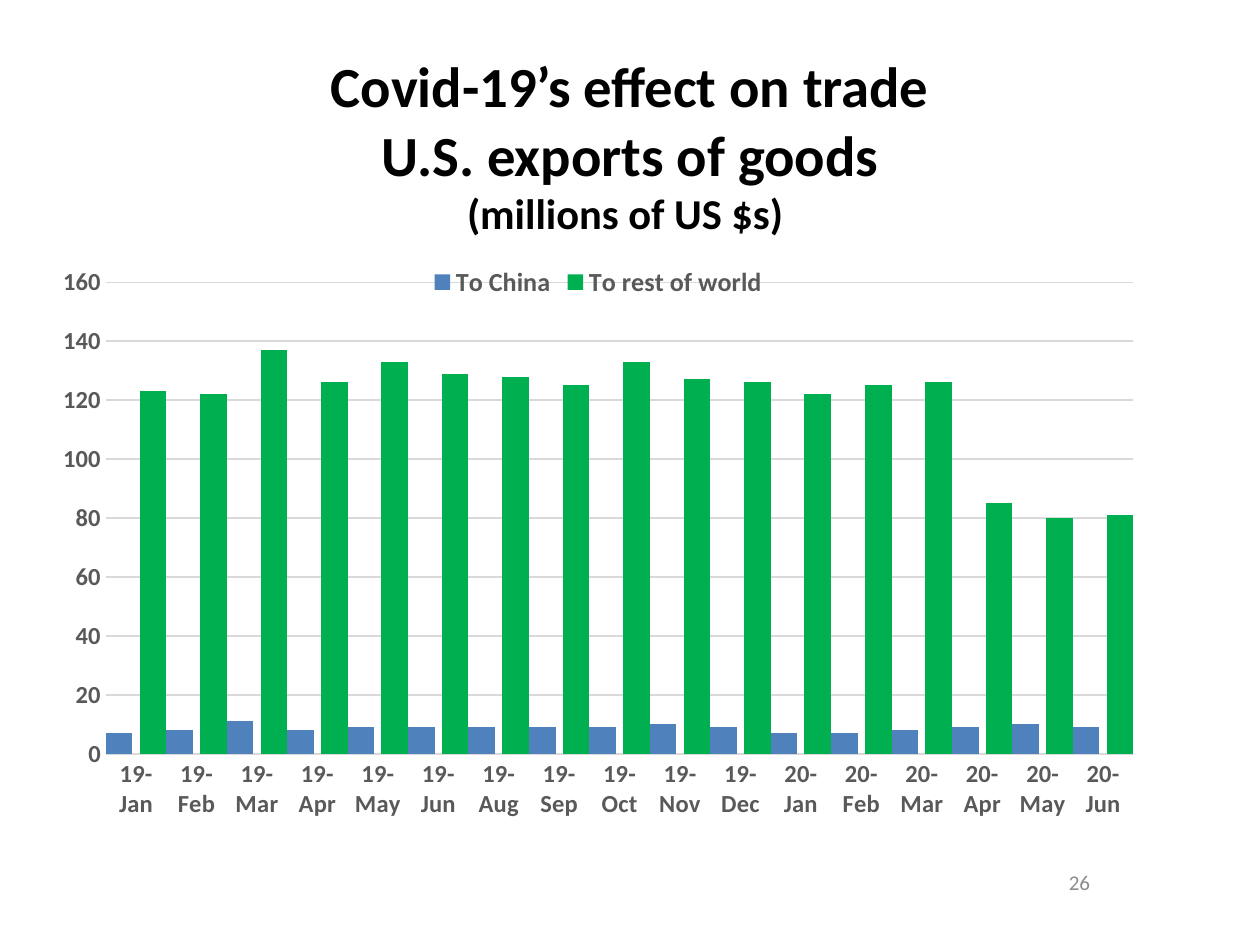
from lxml.etree import SubElement
from pptx import Presentation
from pptx.chart.data import CategoryChartData
from pptx.dml.color import RGBColor
from pptx.enum.chart import XL_CHART_TYPE as ChartType, XL_LEGEND_POSITION as LegendPos, XL_TICK_MARK as Tick
from pptx.enum.text import MSO_ANCHOR as Anchor, PP_ALIGN as Align
from pptx.oxml.ns import qn
from pptx.util import Pt

FONT = "Calibri"
GREY, GRID = "595959", "D9D9D9"
MONTHS = (
    [f"19-{month}" for month in "Jan Feb Mar Apr May Jun Aug Sep Oct Nov Dec".split()]
    + [f"20-{month}" for month in "Jan Feb Mar Apr May Jun".split()]
)
EXPORTS = {
    "To China": ("4F81BD", [7, 8, 11, 8, 9, 9, 9, 9, 9, 10, 9, 7, 7, 8, 9, 10, 9]),
    "To rest of world": ("00B050", [123, 122, 137, 126, 133, 129, 128, 125, 133,
                                    127, 126, 122, 125, 126, 85, 80, 81]),
}


def color(hex_code):
    """Turn a hex string into a colour."""
    return RGBColor.from_string(hex_code)


def style_font(font, size, hex_code, bold):
    """Set typeface, size, colour and weight."""
    font.name, font.size, font.bold = FONT, Pt(size), bold
    font.color.rgb = color(hex_code)


def style_line(line, hex_code):
    """Give an axis or gridline a thin line."""
    line.color.rgb = color(hex_code)
    line.width = Pt(0.75)


def add_text(slide, box, lines, align, hex_code, bold):
    """Add a text box with one paragraph of (text, size) lines."""
    frame = slide.shapes.add_textbox(*map(Pt, box)).text_frame
    frame.word_wrap = True
    frame.vertical_anchor = Anchor.MIDDLE
    paragraph = frame.paragraphs[0]
    paragraph.alignment = align
    for index, (text, size) in enumerate(lines):
        if index:
            paragraph.add_line_break()
        run = paragraph.add_run()
        run.text = text
        style_font(run.font, size, hex_code, bold)


def place_plot(chart, **edges):
    """Fix the inner plot area as fractions of the chart."""
    plot_area = chart.plots[0]._element.getparent()
    layout = plot_area.get_or_add_layout() if hasattr(plot_area, "get_or_add_layout") else plot_area.find(qn("c:layout"))
    if layout is None:
        layout = SubElement(plot_area, qn("c:layout"))
        plot_area.insert(0, layout)
    manual = SubElement(layout, qn("c:manualLayout"))
    settings = {"layoutTarget": "inner", "xMode": "edge", "yMode": "edge", **edges}
    for tag, value in settings.items():
        SubElement(manual, qn(f"c:{tag}")).set("val", str(value))


def add_export_chart(slide, box):
    """Add the clustered columns of monthly exports."""
    export_data = CategoryChartData()
    export_data.categories = MONTHS
    for name, (_, values) in EXPORTS.items():
        export_data.add_series(name, values)
    chart = slide.shapes.add_chart(ChartType.COLUMN_CLUSTERED, *map(Pt, box), export_data).chart
    chart.has_title = False
    style_font(chart.font, 14, "000000", True)

    columns = chart.plots[0]
    columns.vary_by_categories = False
    columns.gap_width, columns.overlap = 0, -27
    for series in columns.series:
        series.format.fill.solid()
        series.format.fill.fore_color.rgb = color(EXPORTS[series.name][0])

    for axis in (chart.category_axis, chart.value_axis):
        axis.major_tick_mark = axis.minor_tick_mark = Tick.NONE
        style_font(axis.tick_labels.font, 14, GREY, True)
    style_line(chart.category_axis.format.line, GRID)
    amounts = chart.value_axis
    amounts.minimum_scale, amounts.maximum_scale, amounts.major_unit = 0, 160, 20
    amounts.format.line.fill.background()
    style_line(amounts.major_gridlines.format.line, GRID)

    chart.has_legend = True
    chart.legend.position = LegendPos.TOP
    chart.legend.include_in_layout = False
    style_font(chart.legend.font, 14.9, GREY, True)
    place_plot(chart, x=0.04, y=0.05, w=0.96, h=0.78)


def main():
    """Build and save the slide."""
    deck = Presentation()
    deck.slide_width, deck.slide_height = Pt(720), Pt(540)
    slide = deck.slides.add_slide(deck.slide_layouts[6])
    heading = [("Covid-19’s effect on trade", 32.4), ("U.S. exports of goods", 32.4),
               ("(millions of US $s) ", 24.3)]
    add_text(slide, (36, 21.6, 648, 122.4), heading, Align.CENTER, "000000", True)
    add_text(slide, (462, 489.6, 168, 28.8), [("26", 12)], Align.RIGHT, "8C8C8C", False)
    add_export_chart(slide, (36, 144, 612, 345.6))
    deck.save("out.pptx")


if __name__ == "__main__":
    main()
